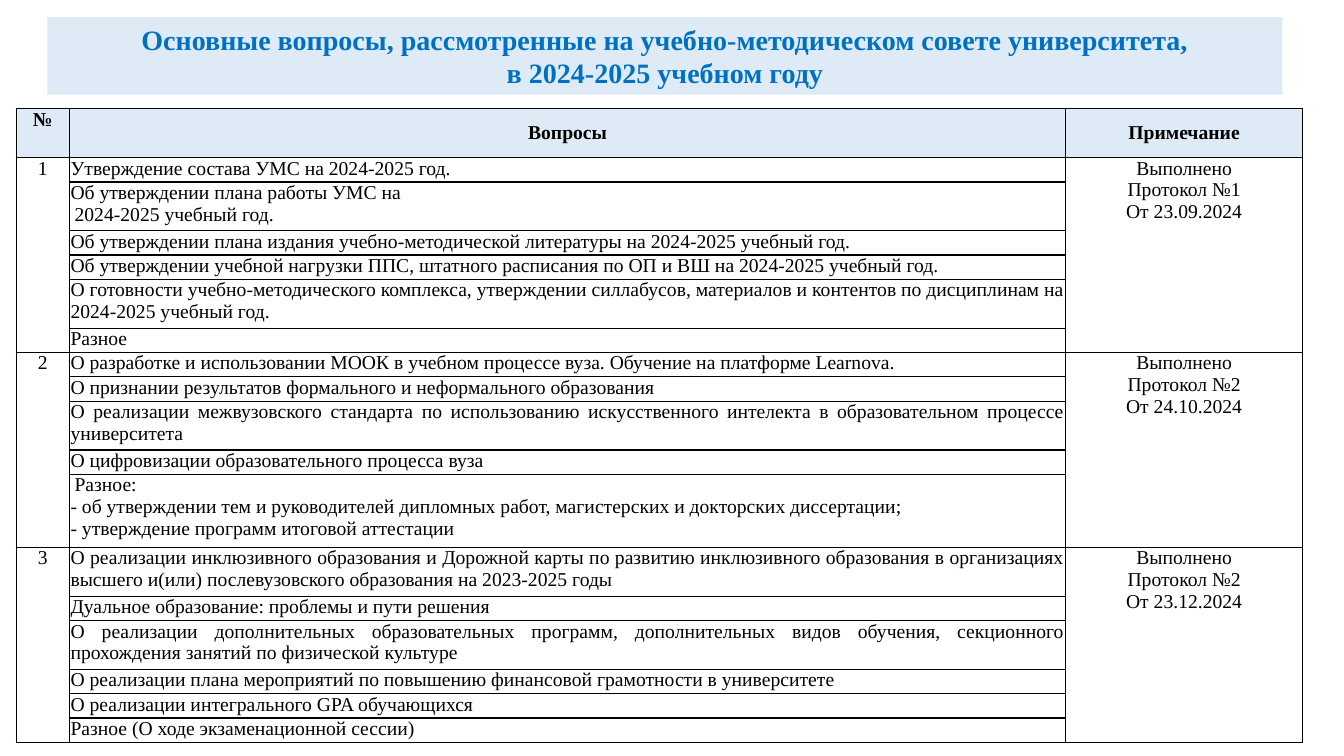
import pptx
import pptx.util
import pptx.dml.color
import pptx.enum.shapes
import pptx.enum.text
import pptx.oxml
import pptx.oxml.ns
from lxml import etree

Inches, Pt = pptx.util.Inches, pptx.util.Pt
RGBColor = pptx.dml.color.RGBColor
ALIGN = pptx.enum.text.PP_ALIGN
ANCHOR = pptx.enum.text.MSO_ANCHOR

# Content
TITLE = ("Основные вопросы, рассмотренные на учебно-методическом совете университета,\n"
         "в 2024-2025 учебном году")
HEADINGS = ["№", "Вопросы", "Примечание"]
# Each meeting: note, then questions with the number of lines they take
MEETINGS = [
    ("Выполнено\nПротокол №1\nОт 23.09.2024", [
        ("Утверждение состава УМС на 2024-2025 год.", 1),
        ("Об утверждении плана работы УМС на\n2024-2025 учебный год.", 2),
        ("Об утверждении плана издания учебно-методической литературы на 2024-2025 учебный год.", 1),
        ("Об утверждении учебной нагрузки ППС, штатного расписания по ОП и ВШ на 2024-2025 учебный год.", 1),
        ("О готовности учебно-методического комплекса, утверждении силлабусов, материалов и контентов "
         "по дисциплинам на 2024-2025 учебный год.", 2),
        ("Разное", 1),
    ]),
    ("Выполнено\nПротокол №2\nОт 24.10.2024", [
        ("О разработке и использовании МООК в учебном процессе вуза. Обучение на платформе Learnova.", 1),
        ("О признании результатов формального и неформального образования", 1),
        ("О реализации межвузовского стандарта по использованию искусственного интелекта "
         "в образовательном процессе университета", 2),
        ("О цифровизации образовательного процесса вуза", 1),
        ("Разное:\n- об утверждении тем и руководителей дипломных работ, магистерских и докторских "
         "диссертации;\n- утверждение программ итоговой аттестации", 3),
    ]),
    ("Выполнено\nПротокол №2\nОт 23.12.2024", [
        ("О реализации инклюзивного образования и Дорожной карты по развитию инклюзивного образования "
         "в организациях высшего и(или) послевузовского образования на 2023-2025 годы", 2),
        ("Дуальное образование: проблемы и пути решения", 1),
        ("О реализации дополнительных образовательных программ, дополнительных видов обучения, "
         "секционного прохождения занятий по физической культуре", 2),
        ("О реализации плана мероприятий по повышению финансовой грамотности в университете", 1),
        ("О реализации интегрального GPA обучающихся", 1),
        ("Разное (О ходе экзаменационной сессии)", 1),
    ]),
]
INDENTED = {"2024-2025 учебный год.", "Разное:"}

# Format
FONT = "Times New Roman"
PALE_BLUE = RGBColor(0xDE, 0xEB, 0xF7)
BLUE = RGBColor(0x00, 0x70, 0xC0)
BLACK = RGBColor(0, 0, 0)
COLUMN_WIDTHS = [0.53, 9.88, 2.35]
TABLE_HEIGHT = 6.29
HEADING_LINES = 2


def write(frame, text, size=14, color=BLACK, bold=False, align=ALIGN.CENTER):
    for index, line in enumerate(text.split("\n")):
        paragraph = frame.add_paragraph() if index else frame.paragraphs[0]
        paragraph.alignment = align
        if line in INDENTED:
            paragraph._p.get_or_add_pPr().set("marL", str(Inches(0.04)))
        run = paragraph.add_run()
        run.text = line
        run.font.name, run.font.size = FONT, Pt(size)
        run.font.bold, run.font.color.rgb = bold, color


def add_borders(cell):
    properties = cell._tc.get_or_add_tcPr()
    for side in ("lnL", "lnR", "lnT", "lnB"):
        line = etree.SubElement(properties, pptx.oxml.ns.qn("a:" + side), w=str(Pt(1)))
        fill = etree.SubElement(line, pptx.oxml.ns.qn("a:solidFill"))
        etree.SubElement(fill, pptx.oxml.ns.qn("a:srgbClr"), val=str(BLACK))


def main():
    deck = pptx.Presentation()
    deck.slide_width, deck.slide_height = Inches(13.33), Inches(7.5)
    slide = deck.slides.add_slide(deck.slide_layouts[6])

    # Title band
    band = slide.shapes.add_shape(pptx.enum.shapes.MSO_SHAPE.RECTANGLE,
                                  Inches(0.47), Inches(0.17), Inches(12.25), Inches(0.77))
    band.shadow.inherit = False
    band.fill.solid()
    band.fill.fore_color.rgb = PALE_BLUE
    band.line.fill.background()
    band.text_frame.word_wrap = True
    write(band.text_frame, TITLE, size=20, color=BLUE, bold=True)

    # Table grid: row heights follow the line counts
    row_lines = [HEADING_LINES] + [lines for _, questions in MEETINGS for _, lines in questions]
    table = slide.shapes.add_table(len(row_lines), len(HEADINGS), Inches(0.16), Inches(1.08),
                                   Inches(sum(COLUMN_WIDTHS)), Inches(TABLE_HEIGHT)).table
    for column, width in zip(table.columns, COLUMN_WIDTHS):
        column.width = Inches(width)
    for row, lines in zip(table.rows, row_lines):
        row.height = Inches(TABLE_HEIGHT * lines / sum(row_lines))
    for index, cell in enumerate(table.iter_cells()):
        cell.margin_left = cell.margin_right = Inches(0.01)
        cell.margin_top = cell.margin_bottom = 0
        cell.vertical_anchor = ANCHOR.TOP
        add_borders(cell)
        if index < len(HEADINGS):
            cell.fill.solid()
            cell.fill.fore_color.rgb = PALE_BLUE
        else:
            cell.fill.background()

    # Headings
    for column, heading in enumerate(HEADINGS):
        cell = table.cell(0, column)
        write(cell.text_frame, heading, bold=True)
        if column:
            cell.vertical_anchor = ANCHOR.MIDDLE

    # Meetings: number and note span all the questions
    first = 1
    for number, (note, questions) in enumerate(MEETINGS, 1):
        last = first + len(questions) - 1
        for column, text in ((0, str(number)), (2, note)):
            table.cell(first, column).merge(table.cell(last, column))
            write(table.cell(first, column).text_frame, text)
        for row, (question, _) in enumerate(questions, first):
            write(table.cell(row, 1).text_frame, question, align=ALIGN.JUSTIFY)
        first = last + 1

    deck.save("out.pptx")


if __name__ == "__main__":
    main()
